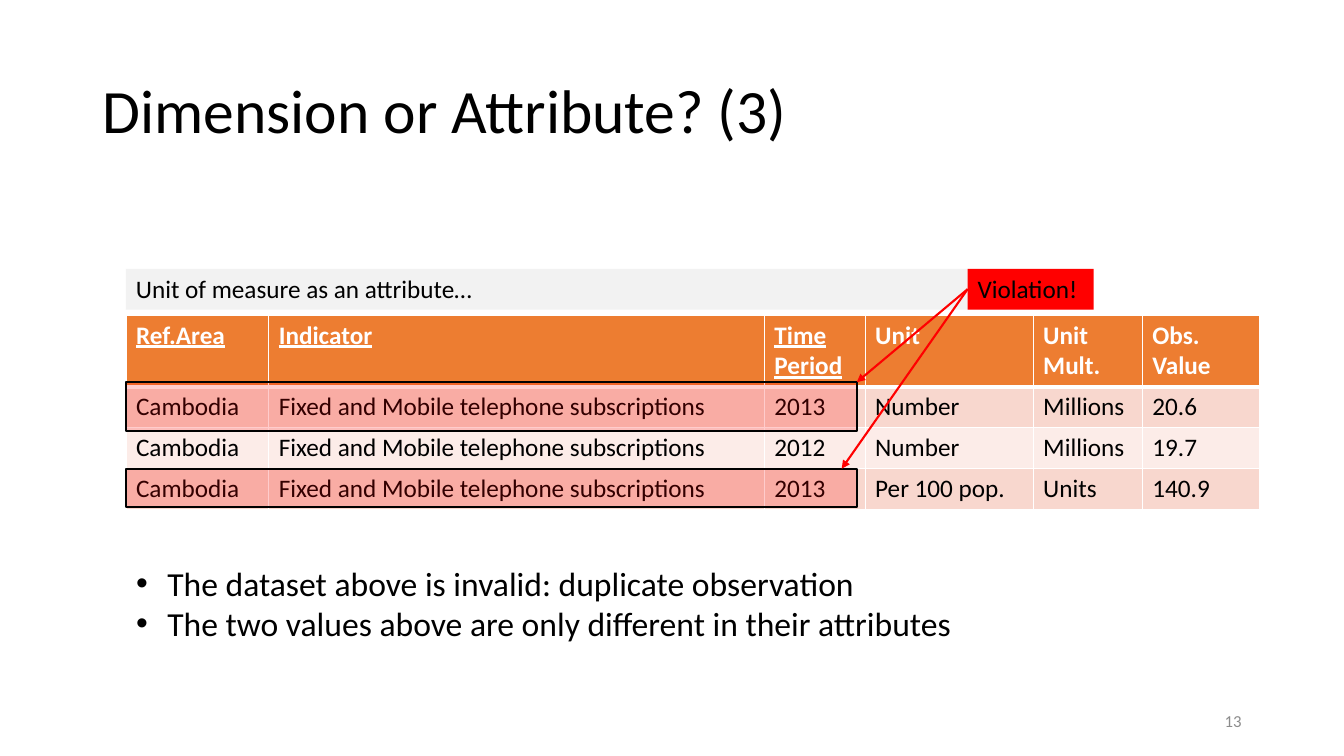
import pptx
import pptx.util
import pptx.dml.color
import pptx.enum.shapes
import pptx.enum.text
import pptx.oxml
import pptx.oxml.ns
from dataclasses import dataclass


@dataclass
class Theme:
    font: str = "Calibri"
    black: str = "000000"
    white: str = "FFFFFF"
    red: str = "FF0000"
    gray: str = "8C8C8C"
    pale: str = "F2F2F2"
    head: str = "ED7D31"
    bands: tuple = ("F8D7CE", "FCECE8")
    title: int = 44
    list: int = 24
    text: int = 18
    note: int = 12
    line: float = 1.5


COLS, ROWS = 160, 90
Align = pptx.enum.text.PP_ALIGN
Anchor = pptx.enum.text.MSO_ANCHOR


def color(code):
    return pptx.dml.color.RGBColor.from_string(code)


def node(tag, inner="", **attrs):
    pairs = "".join(f' {key}="{val}"' for key, val in attrs.items())
    space = pptx.oxml.ns.nsdecls("a")
    return pptx.oxml.parse_xml(f"<a:{tag} {space}{pairs}>{inner}</a:{tag}>")


def write(frame, text, size=Theme.text, ink=Theme.black, bold=False, under=False,
          align=Align.LEFT, anchor=Anchor.TOP, lead=1.0, bullet=False):
    frame.word_wrap = True
    frame.auto_size = pptx.enum.text.MSO_AUTO_SIZE.NONE
    frame.vertical_anchor = anchor
    frame.text = text
    for para in frame.paragraphs:
        para.alignment = align
        para.line_spacing = lead
        para.space_before = pptx.util.Pt(0)
        font = para.runs[0].font
        font.name = Theme.font
        font.size = pptx.util.Pt(size)
        font.bold = bold
        font.underline = under
        font.color.rgb = color(ink)
        if bullet:
            props = para._p.get_or_add_pPr()
            inset = pptx.util.Inches(0.31)
            props.set("marL", str(inset))
            props.set("indent", str(-inset))
            props.append(node("buFont", typeface="Arial"))
            props.append(node("buChar", char="•"))


class Page:
    def __init__(self, deck, theme):
        self.theme = theme
        self.wide, self.high = deck.slide_width, deck.slide_height
        self.slide = deck.slides.add_slide(deck.slide_layouts[1])
        self.shapes = self.slide.shapes

    def x(self, col):
        return round(self.wide * col / COLS)

    def y(self, row):
        return round(self.high * row / ROWS)

    def area(self, left, top, width, height):
        return self.x(left), self.y(top), self.x(width), self.y(height)

    def holder(self, index, place, text, **style):
        shape = self.slide.placeholders[index]
        shape.left, shape.top, shape.width, shape.height = self.area(*place)
        write(shape.text_frame, text, **style)

    def label(self, place, text, **style):
        box = self.shapes.add_textbox(*self.area(*place))
        write(box.text_frame, text, **style)

    def box(self, place, fill, text="", edge=None, alpha=None):
        kind = pptx.enum.shapes.MSO_SHAPE.RECTANGLE
        shape = self.shapes.add_shape(kind, *self.area(*place))
        shape.shadow.inherit = False
        shape.fill.solid()
        shape.fill.fore_color.rgb = color(fill)
        if alpha:
            tint = shape._element.spPr.find(".//" + pptx.oxml.ns.qn("a:srgbClr"))
            tint.append(node("alpha", val=alpha * 1000))
        if edge:
            shape.line.color.rgb = color(edge)
            shape.line.width = pptx.util.Pt(self.theme.line)
        else:
            shape.line.fill.background()
        if text:
            write(shape.text_frame, text)
        return shape

    def arrow(self, start, col, row):
        kind = pptx.enum.shapes.MSO_CONNECTOR.STRAIGHT
        line = self.shapes.add_connector(kind, 0, 0, self.x(col), self.y(row))
        line.begin_connect(start, 1)
        line.line.color.rgb = color(self.theme.red)
        line.line.width = pptx.util.Pt(self.theme.line)
        line.line._get_or_add_ln().append(node("tailEnd", type="triangle"))
        line._element.spPr.append(node("effectLst"))

    def cell(self, cell, text, fill, base, **style):
        props = cell._tc.get_or_add_tcPr()
        paint = f'<a:solidFill><a:srgbClr val="{self.theme.white}"/></a:solidFill>'
        for side, width in zip("LRTB", (1, 1, 1, base)):
            props.append(node(f"ln{side}", paint, w=pptx.util.Pt(width)))
        cell.fill.solid()
        cell.fill.fore_color.rgb = color(fill)
        write(cell.text_frame, text, **style)

    def table(self, left, top, cols, rows, data, keys):
        place = self.area(left, top, sum(cols), sum(rows))
        grid = self.shapes.add_table(len(rows), len(cols), *place).table
        grid.horz_banding = False
        for col, width in zip(grid.columns, cols):
            col.width = self.x(width)
        for row, height in zip(grid.rows, rows):
            row.height = self.y(height)
        for r, record in enumerate(data):
            for c, text in enumerate(record):
                if r == 0:
                    self.cell(grid.cell(r, c), text, self.theme.head, 3, bold=True,
                              ink=self.theme.white, under=c < keys)
                else:
                    self.cell(grid.cell(r, c), text, self.theme.bands[(r - 1) % 2], 1)


def main():
    deck = pptx.Presentation()
    deck.slide_width = pptx.util.Inches(13.33)
    deck.slide_height = pptx.util.Inches(7.5)
    theme = Theme()
    page = Page(deck, theme)
    left = 15

    page.holder(0, (11, 4.8, 138, 17.4), "Dimension or Attribute? (3)",
                size=theme.title, anchor=Anchor.MIDDLE, lead=0.9)
    page.label((113, 83.4, 36, 4.8), "13", size=theme.note, ink=theme.gray,
               align=Align.RIGHT, anchor=Anchor.MIDDLE)

    topic = "Fixed and Mobile telephone subscriptions"
    data = [
        ("Ref.Area", "Indicator", "Time Period", "Unit", "Unit Mult.", "Obs. Value"),
        ("Cambodia", topic, "2013", "Number", "Millions", "20.6"),
        ("Cambodia", topic, "2012", "Number", "Millions", "19.7"),
        ("Cambodia", topic, "2013", "Per 100 pop.", "Units", "140.9"),
    ]
    page.table(left, 37.5, (17, 59, 12, 20, 13, 14), (8.4, 4.85, 4.85, 4.85), data, 3)

    page.box((left, 32, 114.8, 4.85), theme.pale, "Unit of measure as an attribute…")
    alert = page.box((115.2, 32, 15, 4.85), theme.red, "Violation!")
    for top, height, tip in ((45.5, 5.8, 102), (55.8, 4.6, 100.2)):
        page.box((left, top, 87, height), theme.red, edge=theme.black, alpha=20)
        page.arrow(alert, tip, top)

    page.holder(1, (left, 66.4, 126.4, 10.9),
                "The dataset above is invalid: duplicate observation\n"
                "The two values above are only different in their attributes",
                size=theme.list, bullet=True)
    deck.save("out.pptx")


if __name__ == "__main__":
    main()
